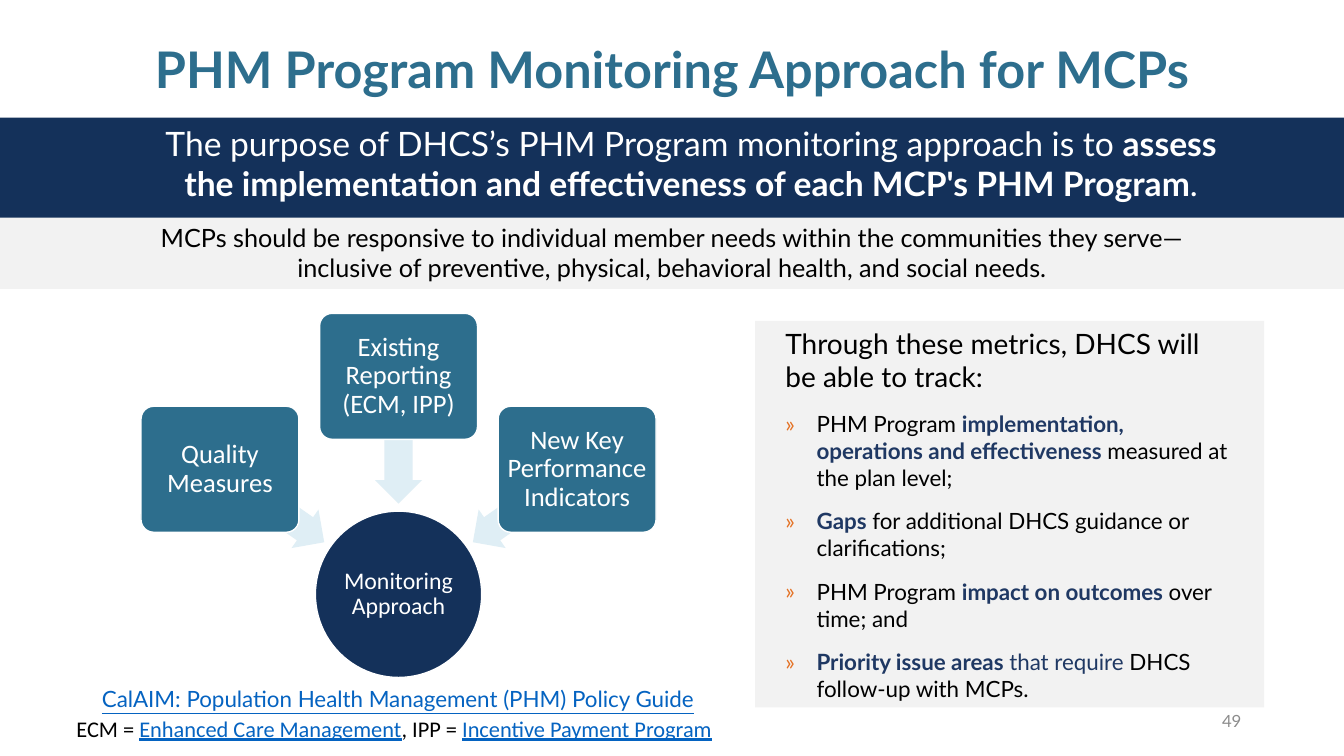
from dataclasses import dataclass
from math import cos, radians, sin

from lxml.etree import SubElement
from pptx import Presentation
from pptx.dml.color import RGBColor
from pptx.enum.shapes import MSO_SHAPE as Shape
from pptx.enum.text import MSO_ANCHOR as Anchor, PP_ALIGN as Align
from pptx.oxml.ns import qn
from pptx.util import Inches, Pt


@dataclass(frozen=True)
class Theme:
    heading_font: str = "Lato"
    diagram_font: str = "Calibri"
    teal: str = "2D6E8D"
    navy: str = "14315A"
    accent: str = "1F3863"
    orange: str = "E47225"
    pale_blue: str = "DFEEF5"
    pale_grey: str = "F2F2F2"
    grey: str = "8C8C8C"
    link: str = "0563C1"
    black: str = "000000"
    white: str = "FFFFFF"
    title: float = 36
    statement: float = 24
    lead: float = 20
    card: float = 19
    note: float = 18
    hub: float = 17
    body: float = 16
    number: float = 12


@dataclass(frozen=True)
class Span:
    text: str
    color: str = ""
    bold: bool = False
    underline: bool = False


class SlideBuilder:
    COLUMNS, ROWS = 160, 90

    def __init__(self, deck, theme):
        self.theme = theme
        self.column = deck.slide_width / self.COLUMNS
        self.row = deck.slide_height / self.ROWS
        self.shapes = deck.slides.add_slide(deck.slide_layouts[6]).shapes

    def area(self, left, top, width, height):
        return (round(left * self.column), round(top * self.row),
                round(width * self.column), round(height * self.row))

    def shape(self, kind, area, fill, outline=None):
        shape = self.shapes.add_shape(kind, *self.area(*area))
        shape.shadow.inherit = False
        shape.fill.solid()
        shape.fill.fore_color.rgb = RGBColor.from_string(fill)
        if outline:
            shape.line.color.rgb = RGBColor.from_string(outline)
            shape.line.width = Pt(1)
        else:
            shape.line.fill.background()
        return shape

    def centred(self, kind, center, size, fill, outline=None):
        area = (center[0] - size[0] / 2, center[1] - size[1] / 2, *size)
        return self.shape(kind, area, fill, outline)

    def frame(self, shape, side=1.2, edge=0.6, anchor=Anchor.TOP, wrap=True):
        frame = shape.text_frame
        frame.word_wrap = wrap
        frame.vertical_anchor = anchor
        frame.margin_left = frame.margin_right = round(side * self.column)
        frame.margin_top = frame.margin_bottom = round(edge * self.row)
        return frame

    def fill_para(self, para, spans, size, color, font=None, align=Align.LEFT, spacing=1.0, after=0):
        para.alignment = align
        para.line_spacing = spacing
        para.space_after = Pt(after)
        for part in spans:
            for index, line in enumerate(part.text.split("\n")):
                if index:
                    para.add_line_break()
                span = para.add_run()
                span.text = line
                span.font.name = font or self.theme.heading_font
                span.font.size = Pt(size)
                span.font.bold = part.bold
                span.font.underline = part.underline
                span.font.color.rgb = RGBColor.from_string(part.color or color)

    def label(self, area, spans, size, color, anchor=Anchor.TOP, wrap=True, **style):
        box = self.shapes.add_textbox(*self.area(*area))
        frame = self.frame(box, anchor=anchor, wrap=wrap)
        self.fill_para(frame.paragraphs[0], spans, size, color, **style)

    def band(self, top, height, fill, spans, size, color, indent=0.0, after=0):
        band = self.shape(Shape.RECTANGLE, (0, top, self.COLUMNS, height), fill)
        para = self.frame(band, side=12).paragraphs[0]
        self.fill_para(para, spans, size, color, align=Align.CENTER, after=after)
        self.indent(para, indent, 0)

    def indent(self, para, left, first):
        properties = para._p.get_or_add_pPr()
        properties.set("marL", str(Inches(left)))
        properties.set("indent", str(Inches(first)))
        return properties

    def bullet(self, para):
        properties = self.indent(para, 0.31, -0.31)
        color = SubElement(properties, qn("a:buClr"))
        SubElement(color, qn("a:srgbClr")).set("val", self.theme.orange)
        SubElement(properties, qn("a:buFont")).set("typeface", self.theme.heading_font)
        SubElement(properties, qn("a:buChar")).set("char", "»")

    def panel(self, area, lead, items):
        theme = self.theme
        panel = self.shape(Shape.RECTANGLE, area, theme.pale_grey)
        frame = self.frame(panel, side=3.6, edge=3.6, anchor=Anchor.MIDDLE)
        self.fill_para(frame.paragraphs[0], [Span(lead)], theme.lead, theme.black, after=12)
        for spans in items:
            para = frame.add_paragraph()
            self.fill_para(para, spans, theme.body, theme.black, after=12)
            self.bullet(para)

    def node(self, kind, center, size, fill, text, points, inset):
        node = self.centred(kind, center, size, fill, self.theme.white)
        if kind == Shape.ROUNDED_RECTANGLE:
            node.adjustments[0] = 0.1
        frame = self.frame(node, side=inset, edge=inset, anchor=Anchor.MIDDLE)
        self.fill_para(frame.paragraphs[0], [Span(text)], points, self.theme.white,
                       font=self.theme.diagram_font, align=Align.CENTER, spacing=0.9)

    def converging(self, center, hub, sources):
        theme = self.theme
        self.node(Shape.OVAL, center, (19.8, 19.8), theme.navy, hub, theme.hub, 0.12)
        for index, text in enumerate(sources):
            angle = 35 + 55 * index

            def spoke(radius):
                return (center[0] - radius * cos(radians(angle)),
                        center[1] - radius * sin(radians(angle)))

            arrow = self.centred(Shape.LEFT_ARROW, spoke(18.4), (15.2, 5.6), theme.pale_blue)
            arrow.rotation = 180 + angle
            arrow.adjustments[0] = 0.6
            arrow.adjustments[1] = 0.5
            self.node(Shape.ROUNDED_RECTANGLE, spoke(25.95), (18.8, 15), theme.teal,
                      text, theme.card, 0.45)


def main():
    deck = Presentation()
    deck.slide_width, deck.slide_height = Inches(13.33), Inches(7.5)
    theme = Theme()
    page = SlideBuilder(deck, theme)

    def strong(text):
        return Span(text, theme.accent, bold=True)

    def link(text):
        return Span(text, theme.link, underline=True)

    page.label((1, 3.4, 158, 10.3), [Span("PHM Program Monitoring Approach for MCPs", bold=True)],
               theme.title, theme.teal, anchor=Anchor.MIDDLE, align=Align.CENTER, spacing=0.9)
    page.label((113, 83.4, 36, 4.8), [Span("49")], theme.number, theme.grey,
               anchor=Anchor.MIDDLE, align=Align.RIGHT)
    page.band(14, 12, theme.navy, [
        Span("The purpose of DHCS’s PHM Program monitoring approach is to "),
        Span("assess the implementation and effectiveness of each MCP's PHM Program", bold=True),
        Span("."),
    ], theme.statement, theme.white, indent=0.38, after=6)
    page.panel((89.9, 38.2, 60.6, 46), "Through these metrics, DHCS will be able to track:", [
        [Span("PHM Program "), strong("implementation, operations and effectiveness "),
         Span("measured at the plan level;")],
        [strong("Gaps"), Span(" for additional DHCS guidance or clarifications;")],
        [Span("PHM Program "), strong("impact on outcomes "), Span("over time; and")],
        [strong("Priority issue areas "), Span("that require ", theme.accent),
         Span("DHCS follow-up with MCPs.")],
    ])
    page.band(25.9, 8.5, theme.pale_grey, [Span(
        "MCPs should be responsive to individual member needs within the communities they serve—\n"
        "inclusive of preventive, physical, behavioral health, and social needs.",
    )], theme.note, theme.black)
    page.converging((47.45, 70.75), "Monitoring Approach", [
        "Quality Measures", "Existing Reporting (ECM, IPP)", "New Key Performance Indicators"])
    page.label((9.5, 81, 75.8, 4.4),
               [link("CalAIM: Population Health Management (PHM) Policy Guide")],
               theme.body, theme.link, align=Align.CENTER)
    page.label((7.9, 84.5, 79, 4.4), [
        Span("ECM = "), link("Enhanced Care Management"),
        Span(", IPP = "), link("Incentive Payment Program"),
    ], theme.body, theme.black, wrap=False, font=theme.diagram_font)
    deck.save("out.pptx")


if __name__ == "__main__":
    main()
